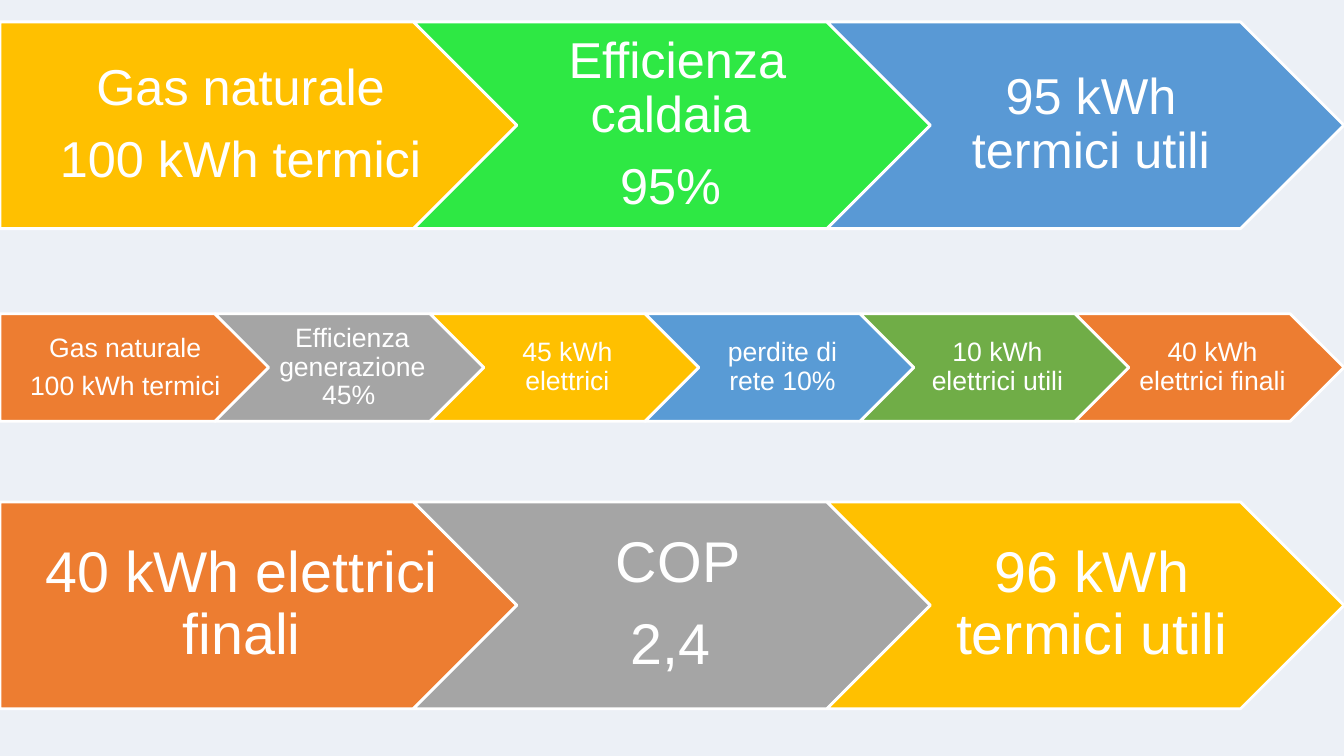
import pptx
import pptx.util
import pptx.dml.color
import pptx.enum.shapes
import pptx.enum.text

SLIDE_WIDTH, SLIDE_HEIGHT = 13.33, 7.5
BACKGROUND, WHITE = "ECF0F6", "FFFFFF"
FONT = "Arial"

# Content: each chain has its top as a share of the slide height, its text size
# and its steps (fill, paragraphs)
CHAINS = [
    (0.029, 36, [
        ("FFC000", ["Gas naturale", "100 kWh termici"]),
        ("2EE844", ["Efficienza caldaia ", "95% "]),
        ("5999D5", ["95 kWh termici utili"]),
    ]),
    (0.415, 19, [
        ("ED7D31", ["Gas naturale", "100 kWh termici"]),
        ("A5A5A5", ["Efficienza generazione 45% "]),
        ("FFC000", ["45 kWh elettrici"]),
        ("599BD5", ["perdite di rete 10%"]),
        ("70AD47", ["10 kWh elettrici utili"]),
        ("ED7D31", ["40 kWh elettrici finali"]),
    ]),
    (0.664, 41, [
        ("ED7D31", ["40 kWh elettrici finali"]),
        ("A5A5A5", ["COP", "2,4 "]),
        ("FFC000", ["96 kWh termici utili"]),
    ]),
]

# Proportions of a step, in step heights
STEP_WIDTH, STEP_PITCH = 2.5, 2.0


def color(hex_value):
    return pptx.dml.color.RGBColor.from_string(hex_value)


def write_label(step, paragraphs, size, is_first):
    frame = step.text_frame
    frame.word_wrap = True
    frame.vertical_anchor = pptx.enum.text.MSO_ANCHOR.MIDDLE
    # Insets and paragraph gaps grow with the text size
    frame.margin_left = pptx.util.Pt(size * (0.42 if is_first else 0.32))
    frame.margin_right = pptx.util.Pt(size * 0.1)
    frame.margin_top = frame.margin_bottom = pptx.util.Pt(size * 0.2)
    for index, words in enumerate(paragraphs):
        line = frame.add_paragraph() if index else frame.paragraphs[0]
        line.alignment = pptx.enum.text.PP_ALIGN.CENTER
        line.line_spacing = 0.9
        line.space_before = pptx.util.Pt(size * 0.35 if index else 0)
        run = line.add_run()
        run.text = words
        run.font.name = FONT
        run.font.size = pptx.util.Pt(size)
        run.font.color.rgb = color(WHITE)


def draw_chain(slide, top_share, size, steps):
    # The overlapping steps together span the slide's width
    height = SLIDE_WIDTH / (STEP_PITCH * (len(steps) - 1) + STEP_WIDTH)
    chain = slide.shapes.add_group_shape()
    for index, (fill, paragraphs) in enumerate(steps):
        is_first = index == 0
        preset = pptx.enum.shapes.MSO_SHAPE
        step = chain.shapes.add_shape(
            preset.PENTAGON if is_first else preset.CHEVRON,
            pptx.util.Inches(index * STEP_PITCH * height),
            pptx.util.Inches(top_share * SLIDE_HEIGHT),
            pptx.util.Inches(STEP_WIDTH * height),
            pptx.util.Inches(height),
        )
        step.adjustments[0] = 0.5
        step.shadow.inherit = False
        step.fill.solid()
        step.fill.fore_color.rgb = color(fill)
        step.line.color.rgb = color(WHITE)
        step.line.width = pptx.util.Pt(2)
        write_label(step, paragraphs, size, is_first)


def main():
    deck = pptx.Presentation()
    deck.slide_width = pptx.util.Inches(SLIDE_WIDTH)
    deck.slide_height = pptx.util.Inches(SLIDE_HEIGHT)
    slide = deck.slides.add_slide(deck.slide_layouts[6])
    slide.background.fill.solid()
    slide.background.fill.fore_color.rgb = color(BACKGROUND)
    for top_share, size, steps in CHAINS:
        draw_chain(slide, top_share, size, steps)
    deck.save("out.pptx")


if __name__ == "__main__":
    main()
